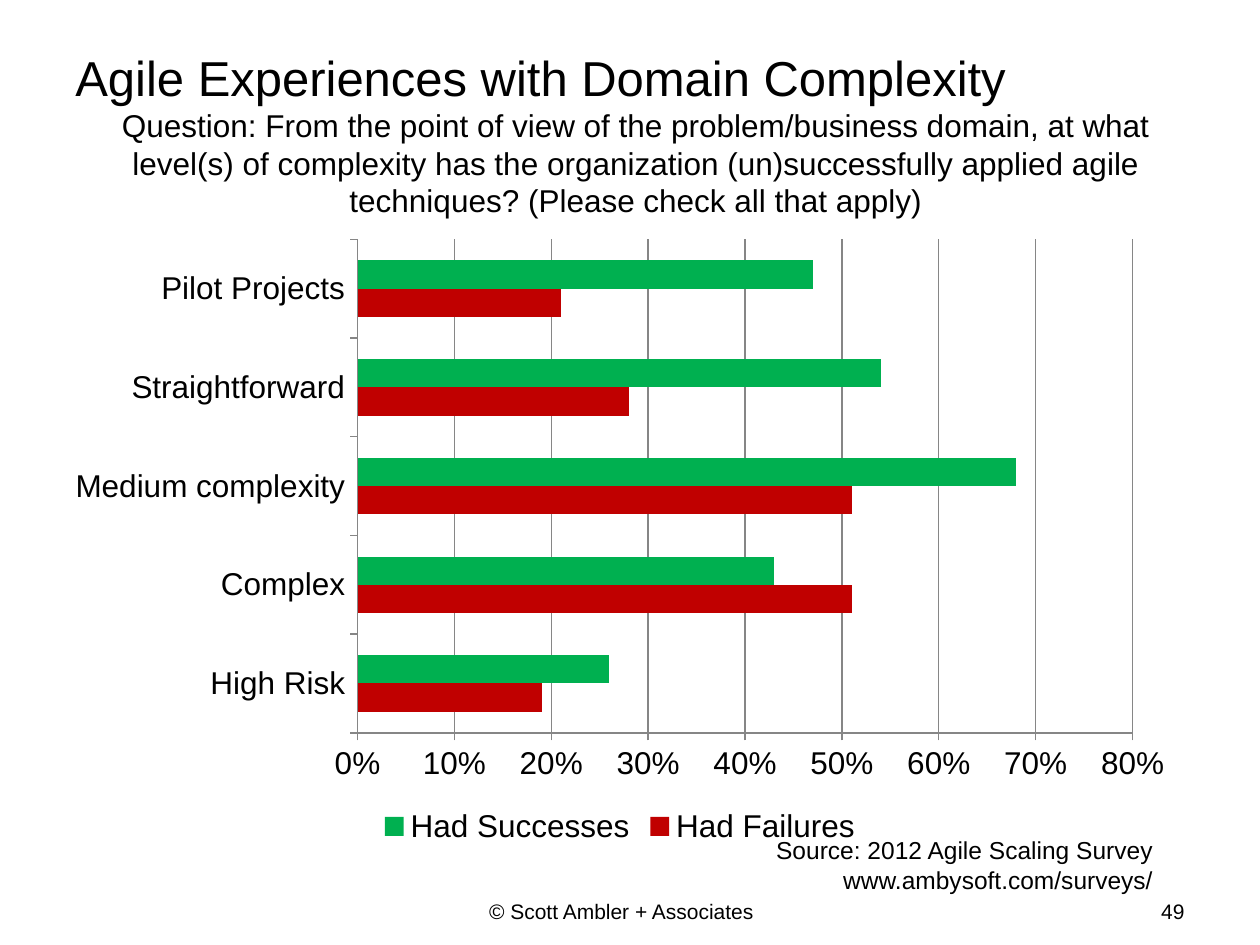
import pptx
import pptx.chart.data
import pptx.dml.color
import pptx.enum.chart
import pptx.enum.text
import pptx.util

Pt = pptx.util.Pt
ALIGN = pptx.enum.text.PP_ALIGN
ANCHOR = pptx.enum.text.MSO_ANCHOR
BLACK = pptx.dml.color.RGBColor(0x00, 0x00, 0x00)
GREY = pptx.dml.color.RGBColor(0x86, 0x86, 0x86)
RED = pptx.dml.color.RGBColor(0xC0, 0x00, 0x00)
GREEN = pptx.dml.color.RGBColor(0x00, 0xB0, 0x50)
FONT = "Arial"

deck = pptx.Presentation()
deck.slide_width, deck.slide_height = Pt(720), Pt(540)
slide = deck.slides.add_slide(deck.slide_layouts[6])


def style_font(font, size):
    font.name = FONT
    font.size = Pt(size)
    font.color.rgb = BLACK


def add_text(lines, left, top, width, height, size, align, anchor=ANCHOR.TOP, wrap=True):
    box = slide.shapes.add_textbox(Pt(left), Pt(top), Pt(width), Pt(height))
    frame = box.text_frame
    frame.word_wrap = wrap
    frame.vertical_anchor = anchor
    frame.text = "\n".join(lines)
    for paragraph in frame.paragraphs:
        paragraph.alignment = align
        style_font(paragraph.font, size)


# Title
add_text(["Agile Experiences with Domain Complexity"],
         36, 21.6, 648, 44.6, 28, ALIGN.LEFT, ANCHOR.MIDDLE)

# Survey results
survey = pptx.chart.data.CategoryChartData(number_format="0%")
survey.categories = ["High Risk", "Complex", "Medium complexity",
                     "Straightforward", "Pilot Projects"]
survey.add_series("Had Failures", [0.19, 0.51, 0.51, 0.28, 0.21])
survey.add_series("Had Successes", [0.26, 0.43, 0.68, 0.54, 0.47])
results = slide.shapes.add_chart(
    pptx.enum.chart.XL_CHART_TYPE.BAR_CLUSTERED,
    Pt(30.2), Pt(129.6), Pt(648), Pt(356.4), survey).chart
style_font(results.font, 18)
results.has_title = False

bars = results.plots[0]
bars.gap_width = 150
bars.vary_by_categories = False
for series, color in zip(bars.series, [RED, GREEN]):
    series.format.fill.solid()
    series.format.fill.fore_color.rgb = color

# Axes and legend
for axis in (results.category_axis, results.value_axis):
    axis.major_tick_mark = pptx.enum.chart.XL_TICK_MARK.OUTSIDE
    axis.format.line.color.rgb = GREY
    axis.format.line.width = Pt(0.75)
percent_axis = results.value_axis
percent_axis.minimum_scale, percent_axis.maximum_scale = 0, 0.8
percent_axis.major_unit = 0.1
percent_axis.tick_labels.number_format = "0%"
percent_axis.tick_labels.number_format_is_linked = False
percent_axis.has_major_gridlines = True
percent_axis.major_gridlines.format.line.color.rgb = GREY
percent_axis.major_gridlines.format.line.width = Pt(0.75)
results.has_legend = True
results.legend.position = pptx.enum.chart.XL_LEGEND_POSITION.BOTTOM
results.legend.include_in_layout = False

# Survey question
add_text(["Question: From the point of view of the problem/business domain, "
          "at what level(s) of complexity has the organization (un)successfully "
          "applied agile techniques? (Please check all that apply)"],
         59.8, 56.9, 607, 72.7, 18, ALIGN.CENTER)

# Source, copyright and page number
add_text(["Source: 2012 Agile Scaling Survey", "www.ambysoft.com/surveys/"],
         434.9, 473.8, 231.1, 41, 14, ALIGN.RIGHT, wrap=False)
add_text(["© Scott Ambler + Associates"], 77.8, 509.8, 360, 19.4, 12, ALIGN.RIGHT)
add_text(["49"], 612, 509.8, 72, 19.4, 12, ALIGN.RIGHT)

deck.save("out.pptx")
